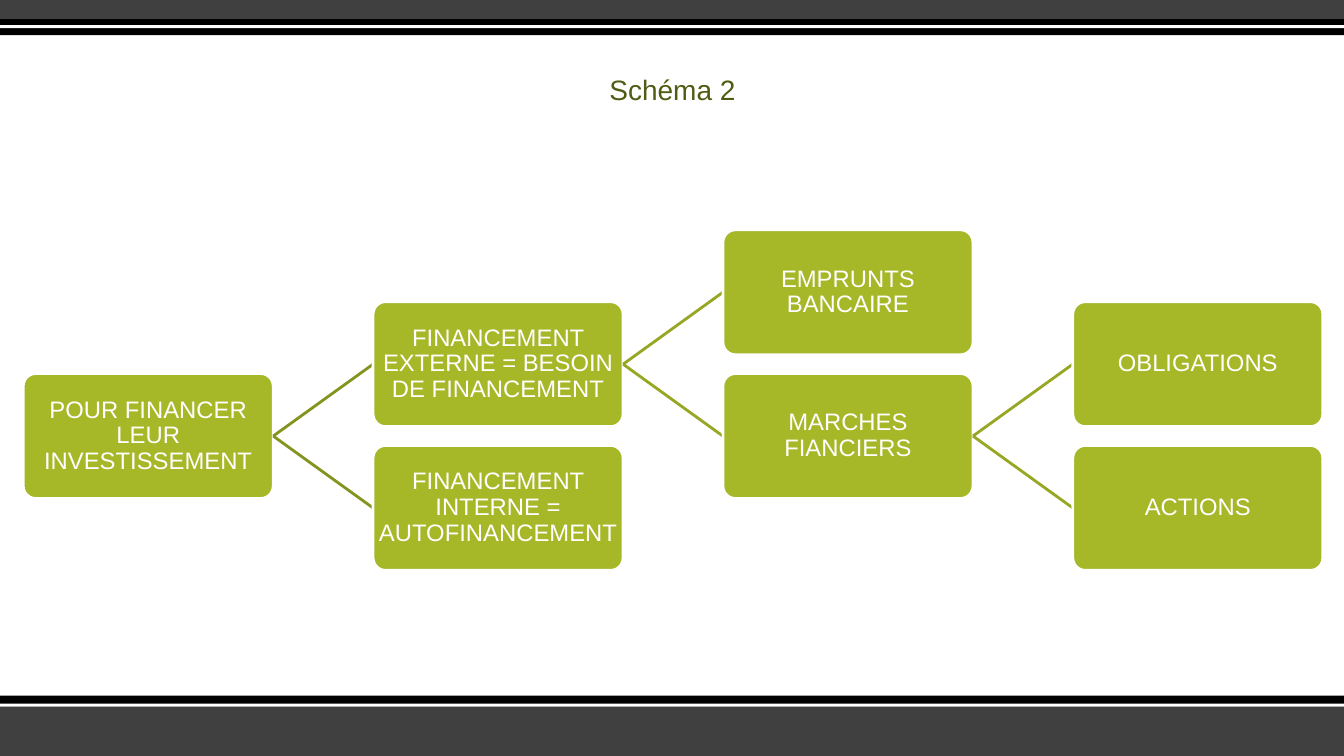
from pptx import Presentation
from pptx.dml.color import RGBColor
from pptx.enum.shapes import MSO_CONNECTOR as Connector, MSO_SHAPE as Preset
from pptx.enum.text import MSO_ANCHOR as Anchor, PP_ALIGN as Align
from pptx.oxml.ns import qn
from pptx.util import Inches, Pt
from lxml import etree

THEME = {
    "font": "Arial", "title_size": Pt(20), "box_size": Pt(17), "line": Pt(2),
    "title": RGBColor.from_string("525B13"),
    "box": RGBColor.from_string("A6B727"),
    "first_link": RGBColor.from_string("85931F"),
    "link": RGBColor.from_string("97A623"),
    "band": RGBColor.from_string("404040"),
    "black": RGBColor.from_string("000000"),
    "white": RGBColor.from_string("FFFFFF"),
}
RIGHT_SIDE, LEFT_SIDE = 3, 1


def add_filled(preset, left, top, width, height, color):
    shape = slide.shapes.add_shape(
        preset, Inches(left), Inches(top), Inches(width), Inches(height))
    shape.shadow.inherit = False
    shape.fill.solid()
    shape.fill.fore_color.rgb = color
    shape.line.fill.background()
    return shape


def write_text(shape, text, size, color, anchor, margin_x, margin_y):
    frame = shape.text_frame
    frame.word_wrap = True
    frame.vertical_anchor = anchor
    frame.margin_left = frame.margin_right = Inches(margin_x)
    frame.margin_top = frame.margin_bottom = Inches(margin_y)
    paragraph = frame.paragraphs[0]
    paragraph.text = text
    paragraph.alignment = Align.CENTER
    paragraph.line_spacing = 0.9
    paragraph.font.name = THEME["font"]
    paragraph.font.size = size
    paragraph.font.color.rgb = color


presentation = Presentation()
presentation.slide_width, presentation.slide_height = Inches(13.33), Inches(7.5)
slide = presentation.slides.add_slide(presentation.slide_layouts[6])

# Bands along the top and bottom edges: top, height, colour
for top, height, color in [
    (7, 0.5, "band"), (6.9, 0.11, "black"), (6.98, 0.03, "white"),
    (0, 0.19, "band"), (0.19, 0.16, "black"), (0.25, 0.03, "white"),
]:
    add_filled(Preset.RECTANGLE, 0, top, 13.33, height, THEME[color])

# Title
title = slide.shapes.add_textbox(Inches(1.67), Inches(0.67), Inches(10), Inches(0.44))
write_text(title, "Schéma 2", THEME["title_size"], THEME["title"],
           Anchor.BOTTOM, 0.1, 0.05)

# Tree grid: each row step is half the distance between siblings
GRID_LEFT, GRID_TOP = 0.23, 2.28
COLUMN_STEP, ROW_STEP = 3.47, 0.713
BOX_WIDTH, BOX_HEIGHT = 2.48, 1.24

# Tree boxes: name, parent, column, row, text
nodes = [
    ("root", None, 0, 2, "POUR FINANCER LEUR INVESTISSEMENT"),
    ("external", "root", 1, 1, "FINANCEMENT EXTERNE = BESOIN DE FINANCEMENT"),
    ("loans", "external", 2, 0, "EMPRUNTS BANCAIRE"),
    ("markets", "external", 2, 2, "MARCHES FIANCIERS"),
    ("bonds", "markets", 3, 1, "OBLIGATIONS"),
    ("shares", "markets", 3, 3, "ACTIONS"),
    ("internal", "root", 1, 3, "FINANCEMENT INTERNE = AUTOFINANCEMENT"),
]
boxes = {}
for name, parent, column, row, text in nodes:
    # The link is added first so that it lies behind its child box
    if parent:
        link = slide.shapes.add_connector(Connector.STRAIGHT, 0, 0, 0, 0)
        link.line.color.rgb = THEME["first_link" if parent == "root" else "link"]
        link.line.width = THEME["line"]
        etree.SubElement(link._element.spPr, qn("a:effectLst"))

    box = add_filled(Preset.ROUNDED_RECTANGLE, GRID_LEFT + column * COLUMN_STEP,
                     GRID_TOP + row * ROW_STEP, BOX_WIDTH, BOX_HEIGHT, THEME["box"])
    box.adjustments[0] = 0.1
    box.line.color.rgb = THEME["white"]
    box.line.width = THEME["line"]
    write_text(box, text, THEME["box_size"], THEME["white"], Anchor.MIDDLE, 0.01, 0.01)
    boxes[name] = box

    if parent:
        link.begin_connect(boxes[parent], RIGHT_SIDE)
        link.end_connect(box, LEFT_SIDE)

presentation.save("out.pptx")
